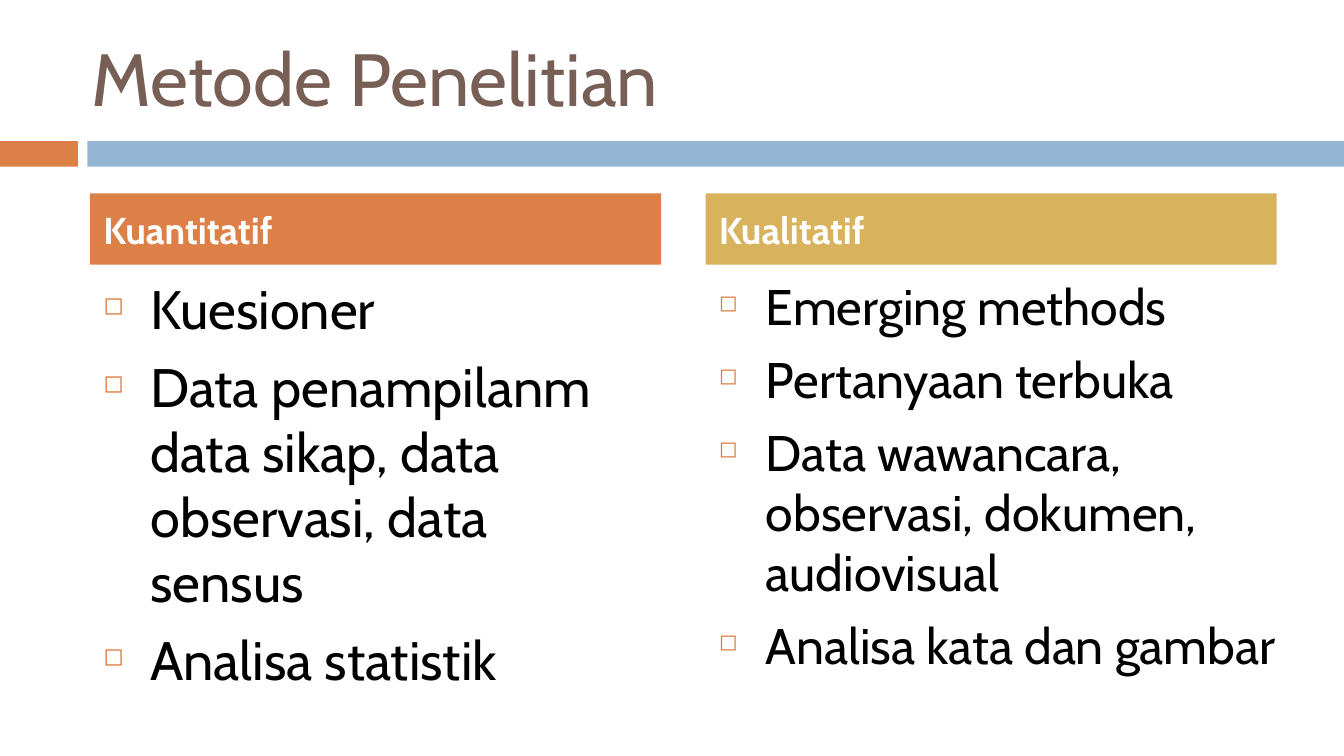
from lxml.etree import SubElement
from pptx import Presentation
from pptx.dml.color import RGBColor
from pptx.enum.shapes import MSO_SHAPE
from pptx.enum.text import MSO_ANCHOR, PP_ALIGN
from pptx.oxml.ns import qn
from pptx.util import Inches, Pt

ORANGE = RGBColor(0xDD, 0x80, 0x47)
BLUE = RGBColor(0x94, 0xB6, 0xD2)
GOLD = RGBColor(0xD8, 0xB2, 0x5C)
BROWN = RGBColor(0x77, 0x5F, 0x55)
WHITE = RGBColor(0xFF, 0xFF, 0xFF)
BLACK = RGBColor(0, 0, 0)

# Widescreen page, 16:9
deck = Presentation()
deck.slide_width = Inches(10)
deck.slide_height = Inches(10 * 9 / 16)
page = deck.slides.add_slide(deck.slide_layouts[6])


def add_bar(left, top, width, height, color):
    bar = page.shapes.add_shape(MSO_SHAPE.RECTANGLE, Inches(left), Inches(top),
                                Inches(width), Inches(height))
    bar.shadow.inherit = False
    bar.fill.solid()
    bar.fill.fore_color.rgb = color
    bar.line.fill.background()
    return bar


def write(paragraph, text, size, color, bold=False):
    paragraph.text = text
    paragraph.alignment = PP_ALIGN.LEFT
    font = paragraph.font
    font.name, font.size, font.bold = "Cabin", Pt(size), bold
    font.color.rgb = color


# Divider band
add_bar(0, 1.05, 0.58, 0.19, ORANGE)
add_bar(0.65, 1.05, 9.35, 0.19, BLUE)

# Title
title = page.shapes.add_textbox(Inches(0.58), Inches(0.22), Inches(8.92), Inches(0.71))
title.text_frame.word_wrap = True
title.text_frame.vertical_anchor = MSO_ANCHOR.MIDDLE
write(title.text_frame.paragraphs[0], "Metode Penelitian", 39.6, BROWN)

# Two columns: left edge, list width, heading, heading color, text size, items
columns = [
    (0.67, 4.25, "Kuantitatif", ORANGE, 29,
     ["Kuesioner",
      "Data penampilanm data sikap, data observasi, data sensus",
      "Analisa statistik"]),
    (5.25, 4.42, "Kualitatif", GOLD, 26.8,
     ["Emerging methods",
      "Pertanyaan terbuka",
      "Data wawancara, observasi, dokumen, audiovisual",
      "Analisa kata dan gambar"]),
]
for left, width, heading, color, size, items in columns:
    header = add_bar(left, 1.44, 4.25, 0.53, color)
    header.text_frame.vertical_anchor = MSO_ANCHOR.MIDDLE
    write(header.text_frame.paragraphs[0], heading, 20, WHITE, bold=True)

    box = page.shapes.add_textbox(Inches(left), Inches(2), Inches(width), Inches(2.94))
    frame = box.text_frame
    frame.word_wrap = True
    for index, item in enumerate(items):
        paragraph = frame.add_paragraph() if index else frame.paragraphs[0]
        if index:
            paragraph.space_before = Pt(7)
        # Hollow square bullet with a hanging indent
        properties = paragraph._p.get_or_add_pPr()
        properties.set("marL", str(Inches(0.35)))
        properties.set("indent", str(-Inches(0.35)))
        bullet_color = SubElement(properties, qn("a:buClr"))
        SubElement(bullet_color, qn("a:srgbClr"), val=str(ORANGE))
        SubElement(properties, qn("a:buSzPct"), val="46000")
        SubElement(properties, qn("a:buChar"), char="◻")
        write(paragraph, item, size, BLACK)

deck.save("out.pptx")
